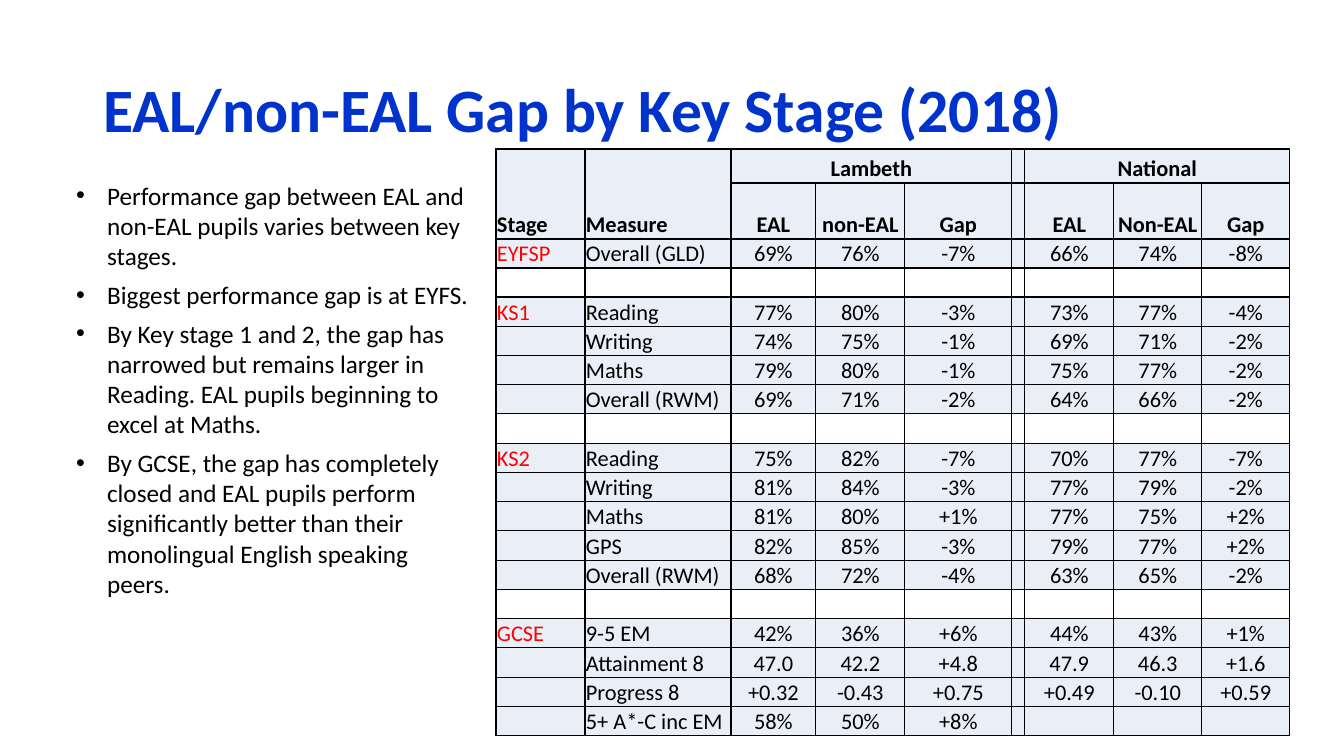
"""Builds a slide comparing attainment gaps of EAL and non-EAL pupils by key stage."""
from itertools import pairwise

from lxml import etree
from pptx import Presentation
from pptx.dml.color import RGBColor
from pptx.enum.text import MSO_ANCHOR, MSO_AUTO_SIZE, PP_ALIGN
from pptx.oxml.ns import qn
from pptx.util import Pt

LEFT, CENTER = PP_ALIGN.LEFT, PP_ALIGN.CENTER
BOTTOM, MIDDLE, TOP = MSO_ANCHOR.BOTTOM, MSO_ANCHOR.MIDDLE, MSO_ANCHOR.TOP
FIT_SHAPE, NO_FIT = MSO_AUTO_SIZE.SHAPE_TO_FIT_TEXT, MSO_AUTO_SIZE.NONE

TITLE = "EAL/non-EAL Gap by Key Stage (2018)"
FINDINGS = [
    "Performance gap between EAL and non-EAL pupils varies between key stages.",
    "Biggest performance gap is at EYFS.",
    "By Key stage 1 and 2, the gap has narrowed but remains larger in Reading. "
    "EAL pupils beginning to excel at Maths.",
    "By GCSE, the gap has completely closed and EAL pupils perform significantly "
    "better than their monolingual English speaking peers.",
]
HEADERS = [
    ["Stage", "Measure", "Lambeth", "", "", "", "National", "", ""],
    ["", "", "EAL", "non-EAL", "Gap", "", "EAL", "Non-EAL", "Gap"],
]
HEADER_MERGES = [((0, 0), (1, 0)), ((0, 1), (1, 1)), ((0, 2), (0, 4)), ((0, 6), (0, 8))]
STAGES = {
    "EYFSP": [("Overall (GLD)", "69%", "76%", "-7%", "66%", "74%", "-8%")],
    "KS1": [
        ("Reading", "77%", "80%", "-3%", "73%", "77%", "-4%"),
        ("Writing", "74%", "75%", "-1%", "69%", "71%", "-2%"),
        ("Maths", "79%", "80%", "-1%", "75%", "77%", "-2%"),
        ("Overall (RWM)", "69%", "71%", "-2%", "64%", "66%", "-2%"),
    ],
    "KS2": [
        ("Reading", "75%", "82%", "-7%", "70%", "77%", "-7%"),
        ("Writing", "81%", "84%", "-3%", "77%", "79%", "-2%"),
        ("Maths", "81%", "80%", "+1%", "77%", "75%", "+2%"),
        ("GPS", "82%", "85%", "-3%", "79%", "77%", "+2%"),
        ("Overall (RWM)", "68%", "72%", "-4%", "63%", "65%", "-2%"),
    ],
    "GCSE": [
        ("9-5 EM", "42%", "36%", "+6%", "44%", "43%", "+1%"),
        ("Attainment 8", "47.0", "42.2", "+4.8", "47.9", "46.3", "+1.6"),
        ("Progress 8", "+0.32", "-0.43", "+0.75", "+0.49", "-0.10", "+0.59"),
        ("5+ A*-C inc EM", "58%", "50%", "+8%", "", "", ""),
    ],
}
COLUMN_WIDTHS = [89, 146, 85, 89, 107, 13, 89, 88, 88]
TABLE_LEFT, TABLE_TOP, HEADER_SPLIT, BODY_TOP, TABLE_BOTTOM = 496, 149, 183, 239, 736
FONT, BLACK, RED, BLUE = "Calibri", "000000", "FF0000", "0033CC"
PALE, WHITE = "EAEFF7", "FFFFFF"


def px(length):
    return round(length * 914400 / 100.8)


def rgb(value):
    return RGBColor.from_string(value)


def style(paragraph, size, color, bold=False, align=LEFT):
    paragraph.alignment = align
    font = paragraph.font
    font.name, font.size, font.bold = FONT, Pt(size), bold
    font.color.rgb = rgb(color)


def place(part, left, top, width, height):
    part.left, part.top, part.width, part.height = map(px, (left, top, width, height))


def add_borders(cell):
    properties = cell._tc.get_or_add_tcPr()
    for position, side in enumerate(("lnL", "lnR", "lnT", "lnB")):
        border = etree.Element(qn(f"a:{side}"), w=str(Pt(1)))
        fill = etree.SubElement(border, qn("a:solidFill"))
        etree.SubElement(fill, qn("a:srgbClr"), val=BLACK)
        properties.insert(position, border)


def table_rows():
    rows = list(HEADERS)
    for stage, measures in STAGES.items():
        if len(rows) > len(HEADERS) + 0 and stage != next(iter(STAGES)):
            rows.append([""] * len(COLUMN_WIDTHS))
        for index, measure in enumerate(measures):
            rows.append([stage if index == 0 else "", *measure[:4], "", *measure[4:]])
    return rows


def fill_cell(cell, words, row, column, shade):
    cell.fill.solid()
    cell.fill.fore_color.rgb = rgb(shade)
    cell.margin_left = cell.margin_right = cell.margin_top = px(1)
    cell.margin_bottom = 0
    cell.vertical_anchor = BOTTOM
    cell.text = words
    paragraph = cell.text_frame.paragraphs[0]
    header = row < len(HEADERS)
    color = RED if column == 0 and not header else BLACK
    style(paragraph, 16, color, header, LEFT if column < 2 else CENTER)
    if not words:
        etree.SubElement(paragraph._p, qn("a:endParaRPr"), sz="1600")
    add_borders(cell)


def add_gap_table(slide):
    rows = table_rows()
    body_count = len(rows) - len(HEADERS)
    step = (TABLE_BOTTOM - BODY_TOP) / body_count
    edges = [TABLE_TOP, HEADER_SPLIT]
    edges += [BODY_TOP + round(index * step) for index in range(body_count + 1)]
    frame = slide.shapes.add_table(
        len(rows), len(COLUMN_WIDTHS), px(TABLE_LEFT), px(TABLE_TOP),
        px(sum(COLUMN_WIDTHS)), px(TABLE_BOTTOM - TABLE_TOP))
    table = frame.table
    table.first_row = table.horz_banding = False
    for column, width in zip(table.columns, COLUMN_WIDTHS):
        column.width = px(width)
    for row, (top, bottom) in zip(table.rows, pairwise(edges)):
        row.height = px(bottom - top)
    for row, entries in enumerate(rows):
        shade = PALE if any(entries) else WHITE
        for column, words in enumerate(entries):
            fill_cell(table.cell(row, column), words, row, column, shade)
    for start, end in HEADER_MERGES:
        table.cell(*start).merge(table.cell(*end))


def add_title(slide):
    title = slide.shapes.title
    place(title, 93, 40, 1159, 146)
    frame = title.text_frame
    frame.text = TITLE
    frame.vertical_anchor, frame.auto_size = MIDDLE, NO_FIT
    frame.paragraphs[0].line_spacing = 0.9
    style(frame.paragraphs[0], 44, BLUE, bold=True)


def add_findings(slide):
    findings = slide.placeholders[1]
    place(findings, 66, 175, 417, 432)
    frame = findings.text_frame
    frame.text = "\n".join(FINDINGS)
    frame.vertical_anchor, frame.auto_size = TOP, FIT_SHAPE
    for paragraph in frame.paragraphs:
        style(paragraph, 18, BLACK)
        paragraph.space_before, paragraph.space_after = Pt(0), Pt(6)
        properties = paragraph._p.get_or_add_pPr()
        properties.set("marL", str(px(31)))
        properties.set("indent", str(-px(31)))


def main():
    deck = Presentation()
    deck.slide_width, deck.slide_height = px(1344), px(756)
    slide = deck.slides.add_slide(deck.slide_layouts[1])
    add_title(slide)
    add_gap_table(slide)
    add_findings(slide)
    deck.save("out.pptx")


if __name__ == "__main__":
    main()
